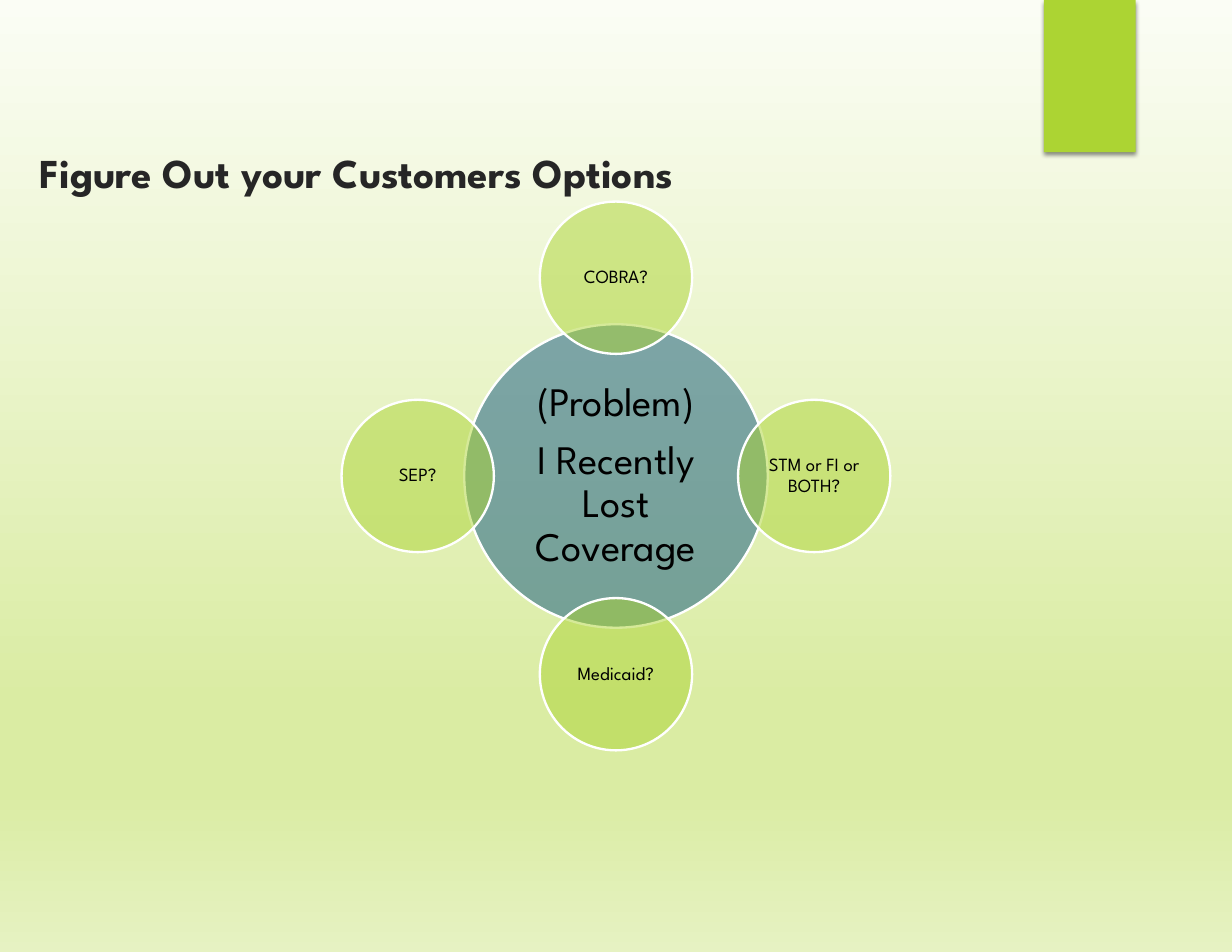
from lxml.etree import SubElement
from pptx import Presentation
from pptx.dml.color import RGBColor
from pptx.enum.shapes import MSO_SHAPE
from pptx.enum.text import MSO_ANCHOR, PP_ALIGN
from pptx.oxml.ns import qn
from pptx.util import Inches, Pt

FONT = "League Spartan"


def color(hex_value):
    return RGBColor.from_string(hex_value)


def add_circle(page, center_x, center_y, diameter, fill, lines, size, inset):
    """Add a half-transparent circle with centred text."""
    circle = page.shapes.add_shape(
        MSO_SHAPE.OVAL,
        Inches(center_x - diameter / 2), Inches(center_y - diameter / 2),
        Inches(diameter), Inches(diameter))
    circle.shadow.inherit = False
    circle.fill.solid()
    circle.fill.fore_color.rgb = color(fill)
    fill_color = circle.fill._xPr.find(qn("a:solidFill"))[0]
    SubElement(fill_color, qn("a:alpha"), val="50000")
    circle.line.color.rgb = color("FFFFFF")
    circle.line.width = Pt(1.5)

    frame = circle.text_frame
    frame.word_wrap = True
    frame.vertical_anchor = MSO_ANCHOR.MIDDLE
    for side in ("left", "top", "right", "bottom"):
        setattr(frame, f"margin_{side}", Inches(inset))
    frame.text = "\n".join(lines)
    for para in frame.paragraphs:
        para.alignment = PP_ALIGN.CENTER
        para.line_spacing = 0.9
        para.space_after = Pt(round(size * 0.35))
        para.font.name = FONT
        para.font.size = Pt(size)
        para.font.color.rgb = color("000000")


deck = Presentation()
deck.slide_width = Inches(11)
deck.slide_height = Inches(8.5)
page = deck.slides.add_slide(deck.slide_layouts[5])

# Background gradient, top to bottom
background = page.background.fill
background.gradient()
background.gradient_angle = 270
stops = page.element.find(".//" + qn("a:gsLst"))
for stop in list(stops):
    stops.remove(stop)
for percent, hex_value in ((0, "FBFDF5"), (74, "DAECA3"), (83, "DAECA3"), (100, "E6F2C2")):
    stop = SubElement(stops, qn("a:gs"), pos=str(percent * 1000))
    SubElement(stop, qn("a:srgbClr"), val=hex_value)

# Corner tab with a soft shadow
tab = page.shapes.add_shape(
    MSO_SHAPE.RECTANGLE, Inches(9.32), Inches(0), Inches(0.82), Inches(1.36))
tab.shadow.inherit = False
tab.fill.solid()
tab.fill.fore_color.rgb = color("ACD433")
tab.line.fill.background()
effects = tab.element.spPr.find(qn("a:effectLst"))
shadow = SubElement(effects, qn("a:outerShdw"), blurRad=str(Pt(3)), dist=str(Pt(2)),
                    dir="5400000", algn="ctr", rotWithShape="0")
shadow_color = SubElement(shadow, qn("a:srgbClr"), val="000000")
SubElement(shadow_color, qn("a:alpha"), val="45000")

# Problem in the middle, options around it
hub_x, hub_y, orbit = 5.5, 4.25, 1.77
add_circle(page, hub_x, hub_y, 2.71, "0E5580",
           ["(Problem)", "I Recently Lost Coverage"], 26, 0.04)
options = (("COBRA?", 0, -1), ("STM or FI or BOTH?", 1, 0), ("Medicaid?", 0, 1), ("SEP?", -1, 0))
for label, step_x, step_y in options:
    add_circle(page, hub_x + step_x * orbit, hub_y + step_y * orbit, 1.36,
               "ACD433", [label], 12, 0.02)

# Title
title = page.shapes.title
title.left, title.top = Inches(0), Inches(1.28)
title.width, title.height = Inches(6.37), Inches(0.53)
frame = title.text_frame
frame.text = "Figure Out your Customers Options"
frame_format = {
    "word_wrap": False, "vertical_anchor": MSO_ANCHOR.TOP,
    "margin_left": Inches(0.08), "margin_right": Inches(0.08),
    "margin_top": Inches(0.04), "margin_bottom": Inches(0.04),
}
for name, value in frame_format.items():
    setattr(frame, name, value)
para = frame.paragraphs[0]
para.alignment = PP_ALIGN.CENTER
for name, value in {"name": FONT, "size": Pt(26.4), "bold": True}.items():
    setattr(para.font, name, value)
para.font.color.rgb = color("262626")

deck.save("out.pptx")
